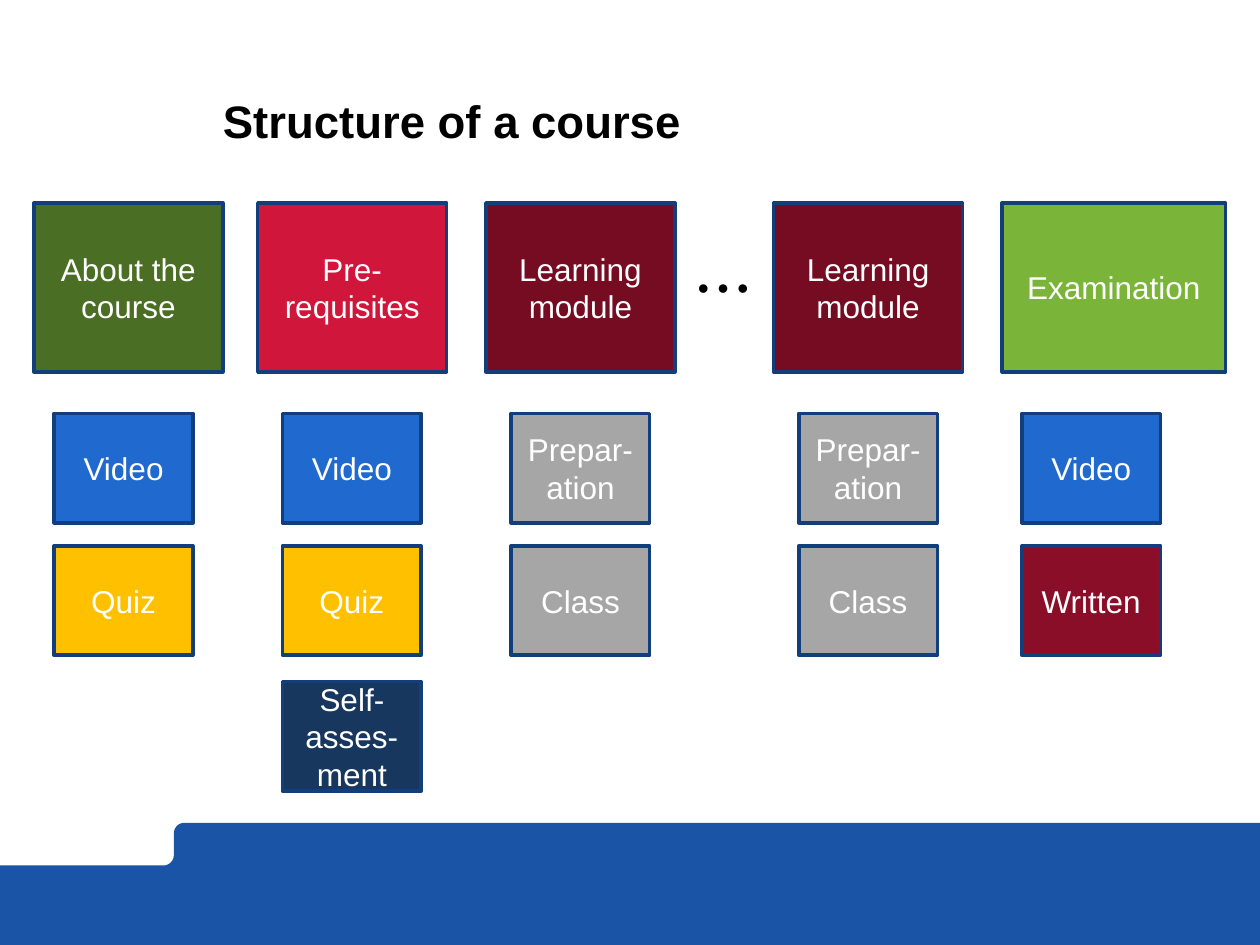
import math
from dataclasses import dataclass

from pptx import Presentation
from pptx.dml.color import RGBColor
from pptx.enum.shapes import MSO_SHAPE
from pptx.enum.text import MSO_ANCHOR, MSO_AUTO_SIZE, PP_ALIGN
from pptx.util import Pt

RECTANGLE = MSO_SHAPE.RECTANGLE
MIDDLE, BOTTOM = MSO_ANCHOR.MIDDLE, MSO_ANCHOR.BOTTOM
LEFT, CENTER = PP_ALIGN.LEFT, PP_ALIGN.CENTER
FIT_SHAPE, NO_FIT = MSO_AUTO_SIZE.SHAPE_TO_FIT_TEXT, MSO_AUTO_SIZE.NONE

FONT = "Arial"
WHITE, BLACK = "FFFFFF", "000000"
OUTLINE, BAND = "123E7B", "1954A6"
MAROON, GREY = "760C22", "A6A6A6"

STAGE_TOP, STAGE_HEIGHT = 116, 96.5
ACTIVITY_TOPS = (236.2, 311.9, 389.5)
ACTIVITY_WIDTH, ACTIVITY_HEIGHT = 79.2, 62.6


@dataclass
class Activity:
    label: str
    fill: str


@dataclass
class Stage:
    label: str
    fill: str
    left: float
    activity_left: float
    activities: tuple[Activity, ...]
    width: float = 108


VIDEO = Activity("Video", "2069CE")
QUIZ = Activity("Quiz", "FFC000")
SELF_ASSESSMENT = Activity("Self-asses-ment", "17375E")
PREPARATION = Activity("Prepar-ation", GREY)
CLASS = Activity("Class", GREY)
WRITTEN = Activity("Written", "8B0E28")

STAGES = (
    Stage("About the course", "4A6E23", 19.4, 31, (VIDEO, QUIZ)),
    Stage("Pre-requisites", "D1163C", 147.3, 161.5, (VIDEO, QUIZ, SELF_ASSESSMENT)),
    Stage("Learning module", MAROON, 277.7, 292.1, (PREPARATION, CLASS)),
    Stage("Learning module", MAROON, 442.1, 456.5, (PREPARATION, CLASS)),
    Stage("Examination", "7AB539", 572.6, 584, (VIDEO, WRITTEN), 127.7),
)


def rgb(value: str) -> RGBColor:
    return RGBColor.from_string(value)


def write(frame, text: str, color: str, size: float, align, bold: bool = False):
    paragraph = frame.paragraphs[0]
    paragraph.alignment = align
    run = paragraph.add_run()
    run.text = text
    run.font.name = FONT
    run.font.size = Pt(size)
    run.font.bold = bold
    run.font.color.rgb = rgb(color)
    return paragraph


def add_box(slide, label: str, fill: str, left: float, top: float,
            width: float, height: float) -> None:
    box = slide.shapes.add_shape(RECTANGLE, Pt(left), Pt(top), Pt(width), Pt(height))
    box.shadow.inherit = False
    box.fill.solid()
    box.fill.fore_color.rgb = rgb(fill)
    box.line.color.rgb = rgb(OUTLINE)
    box.line.width = Pt(2)
    box.text_frame.word_wrap = True
    box.text_frame.vertical_anchor = MIDDLE
    write(box.text_frame, label, WHITE, 18, CENTER)


def add_stage(slide, stage: Stage) -> None:
    add_box(slide, stage.label, stage.fill, stage.left, STAGE_TOP,
            stage.width, STAGE_HEIGHT)
    for activity, top in zip(stage.activities, ACTIVITY_TOPS):
        add_box(slide, activity.label, activity.fill, stage.activity_left, top,
                ACTIVITY_WIDTH, ACTIVITY_HEIGHT)


def arc(x: float, y: float, radius: float, start: int, end: int) -> list:
    angles = [math.radians(start + (end - start) * step / 8) for step in range(9)]
    return [(x + radius * math.cos(a), y + radius * math.sin(a)) for a in angles]


def add_band(slide) -> None:
    step, top, shelf, right, bottom, radius = 99.4, 470.2, 494.6, 720, 541.4, 6
    points = [
        (right, top), (right, bottom), (0, bottom), (0, shelf),
        *arc(step - radius, shelf - radius, radius, 90, 0),
        *arc(step + radius, top + radius, radius, 180, 270),
    ]
    corners = [(Pt(x), Pt(y)) for x, y in points]
    builder = slide.shapes.build_freeform(*corners[0])
    builder.add_line_segments(corners[1:], close=True)
    band = builder.convert_to_shape()
    band.shadow.inherit = False
    band.fill.solid()
    band.fill.fore_color.rgb = rgb(BAND)
    band.line.fill.background()


def add_ellipsis(slide) -> None:
    dots = slide.shapes.add_textbox(Pt(391.7), Pt(149.8), Pt(47.5), Pt(29))
    dots.text_frame.word_wrap = False
    dots.text_frame.auto_size = FIT_SHAPE
    write(dots.text_frame, "• • •", BLACK, 18, LEFT)


def set_title(slide, text: str) -> None:
    title = slide.shapes.title
    title.left, title.top, title.width, title.height = Pt(127.4), Pt(31.7), Pt(546.5), Pt(52.6)
    frame = title.text_frame
    frame.margin_left = frame.margin_right = frame.margin_top = frame.margin_bottom = 0
    frame.vertical_anchor = BOTTOM
    frame.auto_size = NO_FIT
    write(frame, text, BLACK, 26, LEFT, bold=True).line_spacing = Pt(30)


def main() -> None:
    deck = Presentation()
    deck.slide_width, deck.slide_height = Pt(720), Pt(540)
    slide = deck.slides.add_slide(deck.slide_layouts.get_by_name("Title Only"))
    add_band(slide)
    for stage in STAGES:
        add_stage(slide, stage)
    add_ellipsis(slide)
    set_title(slide, "Structure of a course")
    deck.save("out.pptx")


if __name__ == "__main__":
    main()
